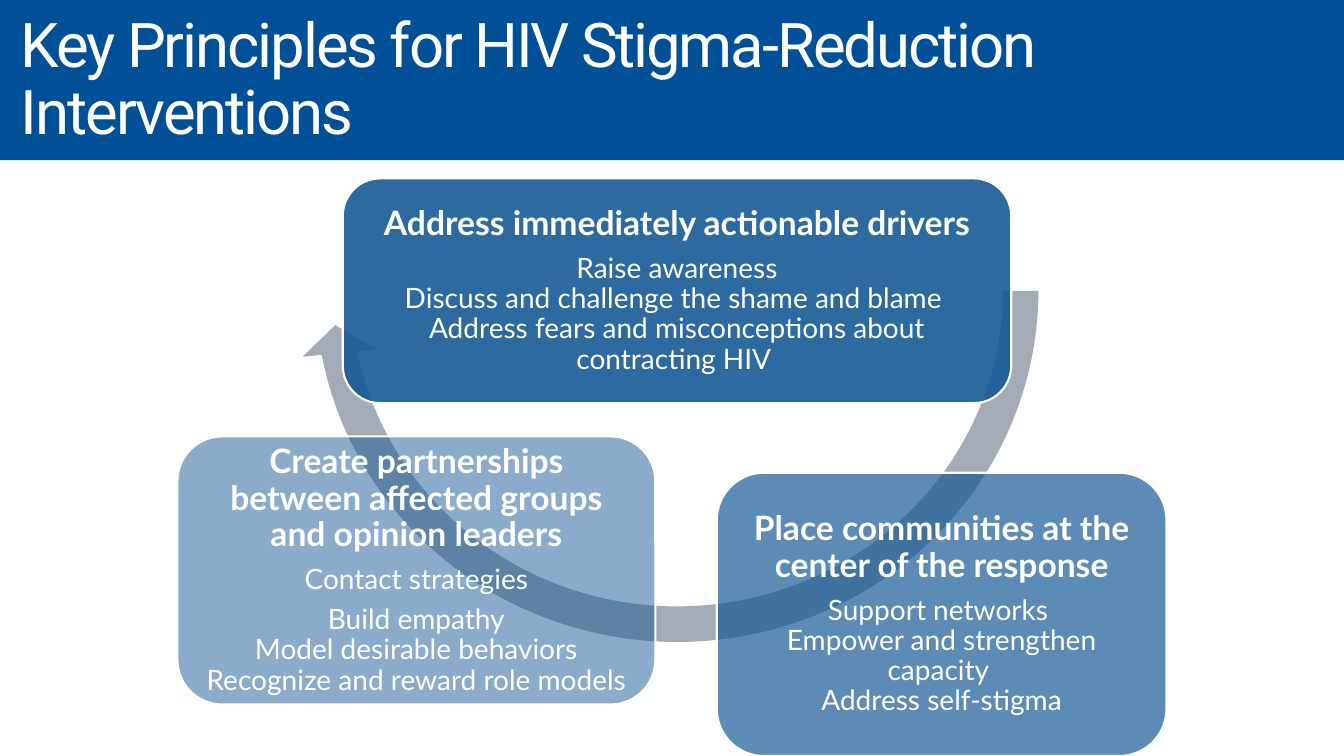
from pptx import Presentation
from pptx.dml.color import RGBColor
from pptx.enum.shapes import MSO_SHAPE
from pptx.enum.text import MSO_ANCHOR, PP_ALIGN
from pptx.util import Inches, Pt
from lxml import etree

COLORS = {"banner": "005098", "card": "175A96", "arrow": "A3ABB7", "white": "FFFFFF"}
TITLE = "Key Principles for HIV Stigma-Reduction Interventions"
ARROW_BOX = (2.94, -0.79, 7.55, 7.35)
ARROW_ADJ = (0.048, 2.834, 101.728, -13.751, 0.05)
HEAD_SIZE, BODY_SIZE = 24, 20
GAP = 0.35

CARDS = [
    {
        "box": (3.4, 1.77, 6.63, 2.23),
        "opacity": 90,
        "head": "Address immediately actionable drivers",
        "body": [(["Raise awareness",
                   "Discuss and challenge the shame and blame ",
                   "Address fears and misconceptions about contracting HIV "], GAP)],
    },
    {
        "box": (7.11, 4.69, 4.46, 2.81),
        "opacity": 70,
        "head": "Place communities at the center of the response",
        "body": [(["Support networks ",
                   "Empower and strengthen capacity ",
                   "Address self-stigma"], GAP)],
    },
    {
        "box": (1.76, 4.33, 4.74, 2.66),
        "opacity": 50,
        "head": "Create partnerships between affected groups and opinion leaders",
        "body": [(["Contact strategies"], GAP),
                 (["Build empathy",
                   "Model desirable behaviors",
                   "Recognize and reward role models"], 0)],
    },
]


def rgb(name):
    return RGBColor.from_string(COLORS[name])


def add_block(s, kind, box, color):
    sp = s.shapes.add_shape(kind, *map(Inches, box))
    sp.shadow.inherit = False
    sp.fill.solid()
    sp.fill.fore_color.rgb = rgb(color)
    sp.line.fill.background()
    return sp


def add_run(p, text, size, font, bold=False):
    r = p.add_run()
    r.text = text
    r.font.size = Pt(size)
    r.font.name = font
    r.font.bold = bold
    r.font.color.rgb = rgb("white")
    return r


def add_lines(p, lines, size, gap, bold=False):
    p.alignment = PP_ALIGN.CENTER
    p.line_spacing = 0.9
    p.space_after = Pt(size * gap)
    for i, line in enumerate(lines):
        if i:
            p.add_line_break()
        add_run(p, line, size, "Lato", bold)


def set_opacity(sp, percent):
    clr = sp.fill._xPr.find(".//{*}srgbClr")
    tag = etree.QName(clr.tag).namespace
    etree.SubElement(clr, "{%s}alpha" % tag).set("val", str(percent * 1000))


def add_card(s, card):
    sp = add_block(s, MSO_SHAPE.ROUNDED_RECTANGLE, card["box"], "card")
    set_opacity(sp, card["opacity"])
    sp.line.color.rgb = rgb("white")
    sp.line.width = Pt(1.5)
    tf = sp.text_frame
    tf.word_wrap = True
    tf.vertical_anchor = MSO_ANCHOR.MIDDLE
    tf.margin_left = tf.margin_right = tf.margin_top = tf.margin_bottom = Inches(0.1)
    add_lines(tf.paragraphs[0], [card["head"]], HEAD_SIZE, GAP, True)
    for lines, gap in card["body"]:
        add_lines(tf.add_paragraph(), lines, BODY_SIZE, gap)


def add_title(s):
    add_block(s, MSO_SHAPE.RECTANGLE, (0, 0, 13.33, 1.59), "banner")
    tb = s.shapes.add_textbox(*map(Inches, (0.11, 0, 13.11, 1.61)))
    tf = tb.text_frame
    tf.word_wrap = True
    tf.vertical_anchor = MSO_ANCHOR.MIDDLE
    p = tf.paragraphs[0]
    p.line_spacing = 0.9
    r = add_run(p, TITLE, 44, "Roboto")
    r.font._element.set("spc", "-150")


def main():
    prs = Presentation()
    prs.slide_width, prs.slide_height = Inches(13.33), Inches(7.5)
    s = prs.slides.add_slide(prs.slide_layouts[6])
    arrow = add_block(s, MSO_SHAPE.CIRCULAR_ARROW, ARROW_BOX, "arrow")
    for i, value in enumerate(ARROW_ADJ):
        arrow.adjustments[i] = value
    for card in CARDS:
        add_card(s, card)
    add_title(s)
    prs.save("out.pptx")


if __name__ == "__main__":
    main()
